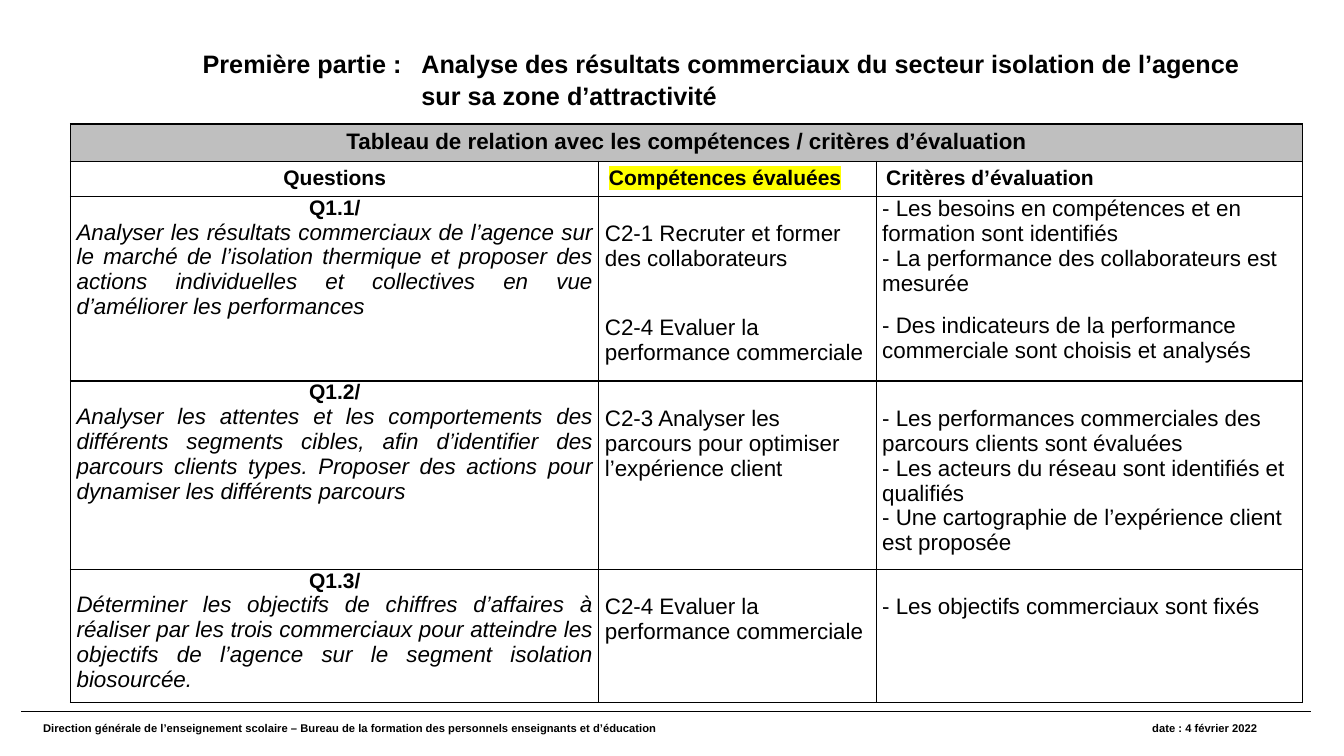
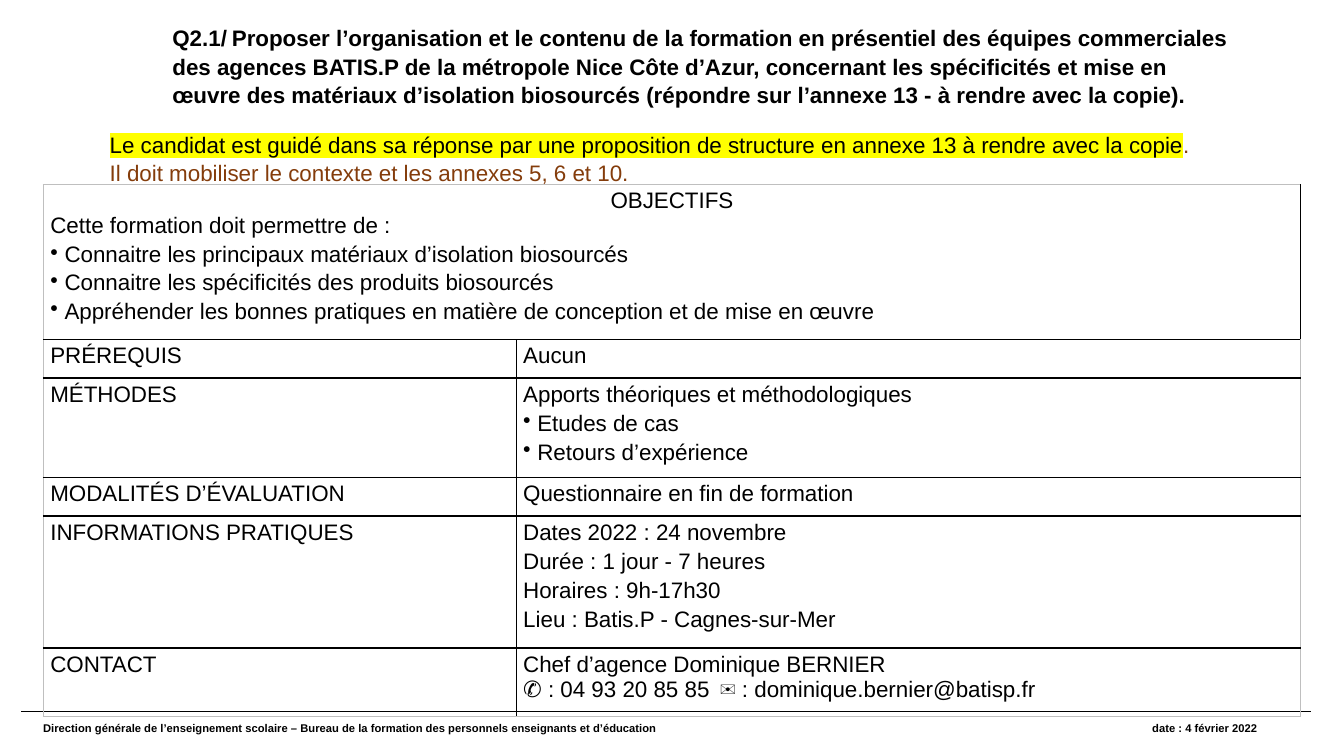
from lxml import etree
from pptx import Presentation
from pptx.dml.color import RGBColor
from pptx.enum.shapes import MSO_CONNECTOR
from pptx.enum.text import MSO_ANCHOR as Anchor, MSO_AUTO_SIZE as AutoSize, PP_ALIGN as Align
from pptx.oxml.ns import qn
from pptx.util import Inches, Pt

# Shared look
FONT = "Arial"
BLACK = RGBColor(0x00, 0x00, 0x00)
GREY = RGBColor(0xBF, 0xBF, 0xBF)
YELLOW = RGBColor(0xFF, 0xFF, 0x00)
BROWN = RGBColor(0x84, 0x3C, 0x0B)
TITLE_SPACING = 1.07
HEADER_INSETS = (0.1, 0.05)
ANSWER_INSETS = (0.06, 0)
PROGRAMME_INSETS = (0.07, 0.04)

FOOTER = ("Direction générale de l’enseignement scolaire – Bureau de la formation "
          "des personnels enseignants et d’éducation\tdate : 4 février 2022")

# Slide 1: question, (skills top gap, skills), (criteria top gap, criteria)
LINE_GAP = 0.25
QUESTIONS = [
    ("Q1.1/",
     "Analyser les résultats commerciaux de l’agence sur le marché de l’isolation thermique "
     "et proposer des actions individuelles et collectives en vue d’améliorer les performances",
     (LINE_GAP, ["C2-1 Recruter et former des collaborateurs",
                 ("C2-4 Evaluer la performance commerciale", {"before": 31.3})]),
     (0, ["- Les besoins en compétences et en formation sont identifiés",
          "- La performance des collaborateurs est mesurée",
          ("- Des indicateurs de la performance commerciale sont choisis et analysés",
           {"before": 12.3})])),
    ("Q1.2/",
     "Analyser les attentes et les comportements des différents segments cibles, afin "
     "d’identifier des parcours clients types. Proposer des actions pour dynamiser les "
     "différents parcours",
     (LINE_GAP, ["C2-3 Analyser les parcours pour optimiser l’expérience client"]),
     (LINE_GAP, ["- Les performances commerciales des parcours clients sont évaluées",
                 "- Les acteurs du réseau sont identifiés et qualifiés",
                 "- Une cartographie de l’expérience client est proposée"])),
    ("Q1.3/",
     "Déterminer les objectifs de chiffres d’affaires à réaliser par les trois commerciaux "
     "pour atteindre les objectifs de l’agence sur le segment isolation biosourcée.",
     (LINE_GAP, ["C2-4 Evaluer la performance commerciale"]),
     (LINE_GAP, ["- Les objectifs commerciaux sont fixés"])),
]

# Slide 2: training programme
BULLET = {"bullet": "•"}
OBJECTIVES = [
    ("OBJECTIFS", {"align": Align.CENTER, "after": 0}),
    ("Cette formation doit permettre de :", {"after": 3}),
    ("Connaitre les principaux matériaux d’isolation biosourcés", BULLET),
    ("Connaitre les spécificités des produits biosourcés", BULLET),
    ("Appréhender les bonnes pratiques en matière de conception et de mise en œuvre", BULLET),
]
PROGRAMME = [
    ("PRÉREQUIS", ["Aucun"]),
    ("MÉTHODES", ["Apports théoriques et méthodologiques",
                  ("Etudes de cas", BULLET), ("Retours d’expérience", BULLET)]),
    ("MODALITÉS D’ÉVALUATION", ["Questionnaire en fin de formation"]),
    ("INFORMATIONS PRATIQUES", ["Dates 2022 : 24 novembre", "Durée : 1 jour - 7 heures",
                                "Horaires : 9h-17h30", "Lieu : Batis.P - Cagnes-sur-Mer"]),
    ("CONTACT", [("Chef d’agence Dominique BERNIER", {"after": 0}),
                 ("✆\u00a0: 04 93 20 85 85\t✉\u00a0: dominique.bernier@batisp.fr",
                  {"tab": 1.95})]),
]


# Text
def add_run(paragraph, text, size=16, bold=False, italic=False, color=BLACK, highlight=None):
    run = paragraph.add_run()
    run.text = text
    font = run.font
    font.name, font.size, font.bold, font.italic = FONT, Pt(size), bold, italic
    font.color.rgb = color
    if highlight is not None:
        mark = etree.Element(qn("a:highlight"))
        etree.SubElement(mark, qn("a:srgbClr"), val=str(highlight))
        run._r.rPr.find(qn("a:solidFill")).addnext(mark)


def write(paragraph, text, align=Align.LEFT, before=0, after=0, spacing=None,
          bullet=None, hang=0, tab=None, **run_format):
    """Fill one paragraph; hang and tab are in inches."""
    properties = paragraph._p.get_or_add_pPr()
    if bullet:
        hang = 0.14
        etree.SubElement(properties, qn("a:buChar"), char=bullet)
    if hang:
        properties.set("marL", str(Inches(hang)))
        properties.set("indent", str(-Inches(hang)))
    if tab:
        stops = etree.SubElement(properties, qn("a:tabLst"))
        etree.SubElement(stops, qn("a:tab"), pos=str(Inches(tab)), algn="l")
    paragraph.alignment = align
    paragraph.space_before, paragraph.space_after = Pt(before), Pt(after)
    if spacing:
        paragraph.line_spacing = spacing
    add_run(paragraph, text, **run_format)


def write_lines(frame, lines, **shared):
    """Each line is a text, or a text with its own format."""
    for index, line in enumerate(lines):
        text, own = (line, {}) if isinstance(line, str) else line
        paragraph = frame.add_paragraph() if index else frame.paragraphs[0]
        write(paragraph, text, **{**shared, **own})


# Slide parts
def add_text_box(slide, left, top, width, height):
    box = slide.shapes.add_textbox(Inches(left), Inches(top), Inches(width), Inches(height))
    box.text_frame.word_wrap = True
    return box.text_frame


def add_footer(slide):
    y = Inches(7.06)
    rule = slide.shapes.add_connector(MSO_CONNECTOR.STRAIGHT, Inches(0.21), y, Inches(13), y)
    rule.line.color.rgb = BLACK
    rule.line.width = Pt(0.8)
    etree.SubElement(rule._element.spPr, qn("a:effectLst"))
    frame = add_text_box(slide, 0.33, 7.11, 12.67, 0.39)
    write(frame.paragraphs[0], FOOTER, size=8, bold=True, tab=11)


def add_titled_slide(prs, title, left, top, width, height, anchor, **title_format):
    slide = prs.slides.add_slide(prs.slide_layouts[5])
    heading = slide.shapes.title
    heading.left, heading.top = Inches(left), Inches(top)
    heading.width, heading.height = Inches(width), Inches(height)
    frame = heading.text_frame
    frame.word_wrap = True
    frame.auto_size = AutoSize.NONE
    frame.vertical_anchor = anchor
    write(frame.paragraphs[0], title, bold=True, spacing=TITLE_SPACING, **title_format)
    add_footer(slide)
    return slide


# Tables
def set_border(cell, side, color, width):
    line = etree.Element(qn(f"a:{side}"), w=str(Pt(width)))
    fill = etree.SubElement(line, qn("a:solidFill"))
    etree.SubElement(fill, qn("a:srgbClr"), val=str(color))
    return line


def add_grid(slide, left, top, widths, heights, outer=(BLACK, 1)):
    """Unfilled table with black inner lines and a full-width first row."""
    rows, cols = len(heights), len(widths)
    table = slide.shapes.add_table(rows, cols, Inches(left), Inches(top),
                                   Inches(sum(widths)), Inches(sum(heights))).table
    table.first_row = table.horz_banding = False
    for column, width in zip(table.columns, widths):
        column.width = Inches(width)
    for row, height in zip(table.rows, heights):
        row.height = Inches(height)
    for r in range(rows):
        for c in range(cols):
            cell = table.cell(r, c)
            cell.fill.background()
            on_edge = {"lnL": c == 0, "lnR": c == cols - 1, "lnT": r == 0, "lnB": r == rows - 1}
            for index, (side, edge) in enumerate(on_edge.items()):
                border = set_border(cell, side, *(outer if edge else (BLACK, 1)))
                cell._tc.tcPr.insert(index, border)
    table.cell(0, 0).merge(table.cell(0, cols - 1))
    return table


def fill_cell(cell, lines, insets, top_gap=0, **shared):
    side, edge = insets
    cell.margin_left = cell.margin_right = Inches(side)
    cell.margin_top, cell.margin_bottom = Inches(edge + top_gap), Inches(edge)
    write_lines(cell.text_frame, lines, **shared)


# Slides
def build_skills_slide(prs):
    slide = add_titled_slide(
        prs, "Première partie\u00a0:\tAnalyse des résultats commerciaux du secteur isolation "
        "de l’agence sur sa zone d’attractivité",
        1.91, 0.42, 10.75, 0.71, Anchor.MIDDLE, size=18, hang=2.17)
    table = add_grid(slide, 0.7, 1.23, [5.24, 2.75, 4.23], [0.37, 0.34, 1.83, 1.87, 1.32])

    banner = table.cell(0, 0)
    banner.fill.solid()
    banner.fill.fore_color.rgb = GREY
    fill_cell(banner, ["Tableau de relation avec les compétences / critères d’évaluation"],
              HEADER_INSETS, align=Align.CENTER, bold=True)

    headings = [("Questions", {"align": Align.CENTER}),
                ("Compétences évaluées", {"highlight": YELLOW}),
                ("Critères d’évaluation", {})]
    for column, heading in enumerate(headings):
        fill_cell(table.cell(1, column), [heading], HEADER_INSETS, size=15, bold=True)

    for row, (number, question, *answers) in enumerate(QUESTIONS, start=2):
        fill_cell(table.cell(row, 0),
                  [(number, {"align": Align.CENTER, "size": 15, "bold": True}),
                   (question, {"align": Align.JUSTIFY, "italic": True})], ANSWER_INSETS)
        for column, (top_gap, lines) in enumerate(answers, start=1):
            fill_cell(table.cell(row, column), lines, ANSWER_INSETS, top_gap)


def build_training_slide(prs):
    slide = add_titled_slide(
        prs, "Q2.1/\tProposer l’organisation et le contenu de la formation\u00a0en présentiel "
        "des équipes commerciales des agences BATIS.P de la métropole Nice Côte d’Azur, "
        "concernant les spécificités et mise en œuvre des matériaux d’isolation biosourcés "
        "(répondre sur l’annexe 13 - à rendre avec la copie).",
        1.61, 0.17, 10.73, 0.91, Anchor.TOP, tab=0.59)

    table = add_grid(slide, 0.43, 1.83, [4.69, 7.78], [1.54, 0.38, 0.99, 0.38, 1.31, 0.68],
                     outer=(GREY, 0.75))
    fill_cell(table.cell(0, 0), OBJECTIVES, PROGRAMME_INSETS, after=2.4)
    for row, (topic, details) in enumerate(PROGRAMME, start=1):
        fill_cell(table.cell(row, 0), [topic], PROGRAMME_INSETS)
        fill_cell(table.cell(row, 1), details, PROGRAMME_INSETS,
                  after=3 if len(details) > 1 else 0)

    guidance = add_text_box(slide, 0.99, 1.23, 11.04, 0.64)
    write_lines(guidance, [
        ("Le candidat est guidé dans sa réponse par une proposition de structure en annexe 13 "
         "à rendre avec la copie", {"highlight": YELLOW}),
        ("Il doit mobiliser le contexte et les annexes 5, 6 et 10.", {"color": BROWN}),
    ], spacing=TITLE_SPACING)
    add_run(guidance.paragraphs[0], ".", color=BROWN)


def main():
    prs = Presentation()
    prs.slide_width, prs.slide_height = Inches(13.33), Inches(7.5)
    build_skills_slide(prs)
    build_training_slide(prs)
    prs.save("out.pptx")


if __name__ == "__main__":
    main()
